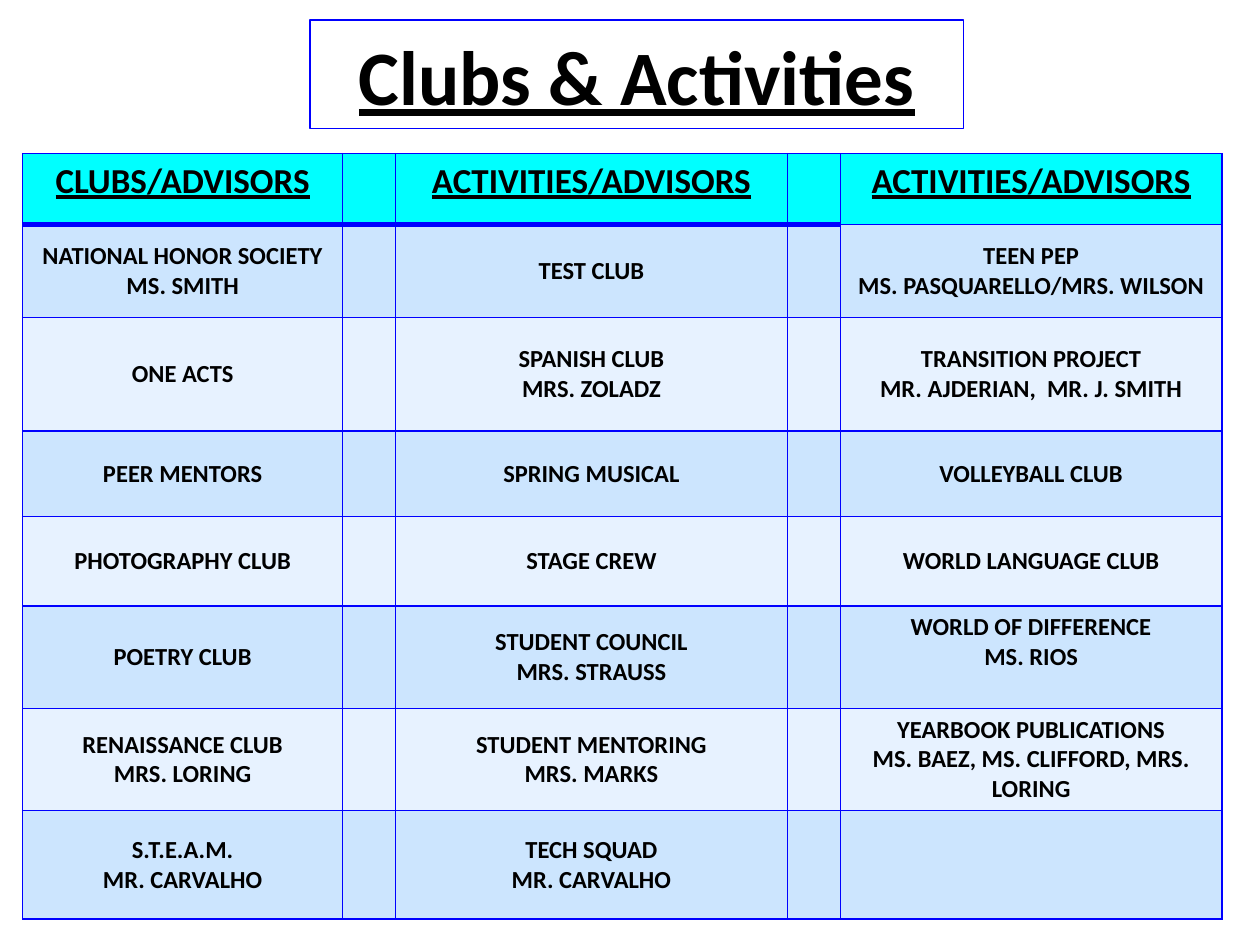
from lxml.etree import SubElement
from pptx import Presentation
from pptx.dml.color import RGBColor
from pptx.enum.text import MSO_ANCHOR as Anchor, MSO_AUTO_SIZE as AutoSize, PP_ALIGN as Align
from pptx.oxml.ns import qn
from pptx.util import Inches, Pt

BLUE, CYAN, BLACK = "0000FF", "00FFFF", "000000"
BANDS = ("CCE5FE", "E7F2FF")
COLUMN_WIDTHS = (2.54, 0.42, 3.11, 0.42, 3.03)
ROW_HEIGHTS = (0.56, 0.74, 0.9, 0.68, 0.71, 0.81, 0.81, 0.86)
ROWS = (
    ("CLUBS/ADVISORS", "ACTIVITIES/ADVISORS", "ACTIVITIES/ADVISORS"),
    ("NATIONAL HONOR SOCIETY\nMS. SMITH", "TEST CLUB", "TEEN PEP\nMS. PASQUARELLO/MRS. WILSON"),
    ("ONE ACTS", "SPANISH CLUB\nMRS. ZOLADZ", "TRANSITION PROJECT\nMR. AJDERIAN,  MR. J. SMITH"),
    ("PEER MENTORS", "SPRING MUSICAL", "VOLLEYBALL CLUB"),
    ("PHOTOGRAPHY CLUB", "STAGE CREW", "WORLD LANGUAGE CLUB"),
    ("POETRY CLUB", "STUDENT COUNCIL\nMRS. STRAUSS", "WORLD OF DIFFERENCE\nMS. RIOS"),
    ("RENAISSANCE CLUB\nMRS. LORING", "STUDENT MENTORING\nMRS. MARKS",
     "YEARBOOK PUBLICATIONS\nMS. BAEZ, MS. CLIFFORD, MRS. LORING"),
    ("S.T.E.A.M.\nMR. CARVALHO", "TECH SQUAD\nMR. CARVALHO", ""),
)


def color(value):
    """Turn a hex string into a colour."""
    return RGBColor.from_string(value)


def write(frame, text, size, underline=False):
    """Fill a text frame with centred bold lines."""
    for index, line in enumerate(text.split("\n")):
        para = frame.add_paragraph() if index else frame.paragraphs[0]
        para.alignment = Align.CENTER
        span = para.add_run()
        span.text = line
        font = span.font
        font.name, font.size, font.bold = "Calibri", Pt(size), True
        font.underline = underline
        font.color.rgb = color(BLACK)


def set_border(cell, side, width):
    """Draw one blue cell border."""
    line = SubElement(cell._tc.get_or_add_tcPr(), qn(f"a:ln{side}"), w=str(Pt(width)))
    fill = SubElement(line, qn("a:solidFill"))
    SubElement(fill, qn("a:srgbClr"), val=BLUE)


def add_title(page, left, top, width, height):
    """Place the outlined slide title."""
    title = page.shapes.title
    title.left, title.top = Inches(left), Inches(top)
    title.width, title.height = Inches(width), Inches(height)
    title.line.color.rgb = color(BLUE)
    title.line.width = Pt(0.75)
    frame = title.text_frame
    frame.auto_size = AutoSize.NONE
    frame.vertical_anchor = Anchor.MIDDLE
    write(frame, "Clubs & Activities", 44, underline=True)


def format_cell(cell, row, column):
    """Give a cell its borders, fill and anchor."""
    heavy = column < len(COLUMN_WIDTHS) - 1
    top = 3 if heavy and row == 1 else 1
    bottom = 3 if heavy and row == 0 else 1
    for side, width in (("L", 1), ("R", 1), ("T", top), ("B", bottom)):
        set_border(cell, side, width)
    cell.fill.solid()
    cell.fill.fore_color.rgb = color(BANDS[(row - 1) % 2] if row else CYAN)
    cell.vertical_anchor = Anchor.MIDDLE if row else Anchor.TOP


def add_club_table(page, left, top):
    """Place the banded table with its narrow spacer columns."""
    table = page.shapes.add_table(
        len(ROW_HEIGHTS), len(COLUMN_WIDTHS), Inches(left), Inches(top),
        Inches(sum(COLUMN_WIDTHS)), Inches(sum(ROW_HEIGHTS))).table
    table.first_row = table.horz_banding = False
    for column, width in zip(table.columns, COLUMN_WIDTHS):
        column.width = Inches(width)
    for row, height in zip(table.rows, ROW_HEIGHTS):
        row.height = Inches(height)
    for row, texts in enumerate(ROWS):
        for column in range(len(COLUMN_WIDTHS)):
            format_cell(table.cell(row, column), row, column)
        for index, text in enumerate(texts):
            if text:
                frame = table.cell(row, index * 2).text_frame
                write(frame, text, 14 if row else 20, underline=row == 0)
    table.cell(5, 4).margin_bottom = Inches(0.29)


def main():
    """Build and save the slide."""
    deck = Presentation()
    deck.slide_width, deck.slide_height = Inches(10), Inches(7.5)
    page = deck.slides.add_slide(deck.slide_layouts[5])
    add_title(page, 2.46, 0.16, 5.19, 0.86)
    add_club_table(page, 0.18, 1.22)
    deck.save("out.pptx")


if __name__ == "__main__":
    main()
